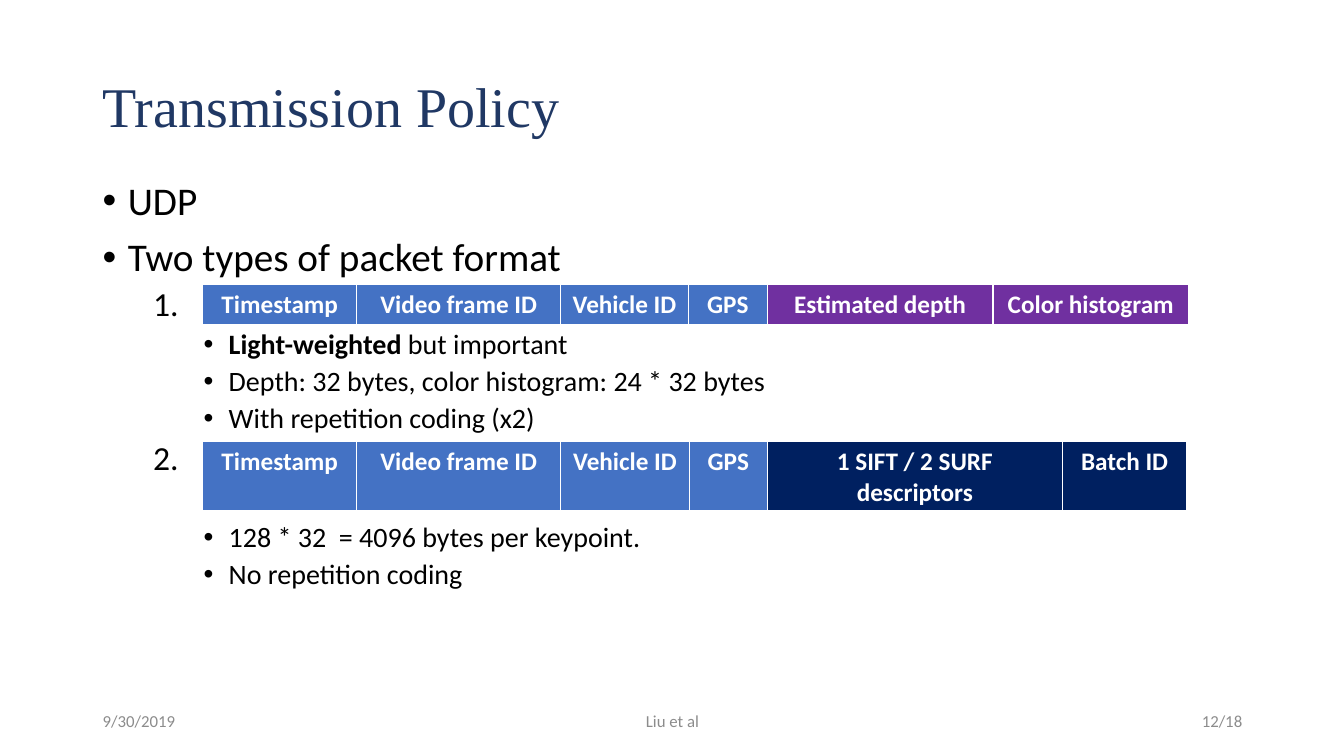
from lxml import etree
from pptx import Presentation
from pptx.dml.color import RGBColor
from pptx.enum.text import MSO_ANCHOR, PP_ALIGN
from pptx.oxml.ns import qn
from pptx.util import Inches, Pt

LEFT, CENTER, RIGHT = PP_ALIGN.LEFT, PP_ALIGN.CENTER, PP_ALIGN.RIGHT
TOP, MIDDLE = MSO_ANCHOR.TOP, MSO_ANCHOR.MIDDLE

COLORS = {"title": "203864", "text": "000000", "foot": "8C8C8C",
          "white": "FFFFFF", "head": "4472C4", "light": "7030A0",
          "heavy": "002060"}

# Content
TITLE = "Transmission Policy"
# Level, bold lead, rest of the line, space before in points
BODY = [
    ("main", "", "UDP", 0),
    ("main", "", "Two types of packet format", 10),
    ("number", "", "1.", 5),
    ("sub", "Light-weighted ", "but important", 5),
    ("sub", "", "Depth: 32 bytes, color histogram: 24 * 32 bytes", 5),
    ("sub", "", "With repetition coding (x2)", 5),
    ("number", "", "2.", 5),
    ("sub", "", "128 * 32  = 4096 bytes per keypoint.", 32),
    ("sub", "", "No repetition coding", 5),
]
# Level: size, left margin, indent, bullet
LEVELS = {"main": (28, 0.25, -0.25, "•"),
          "number": (24, 0.5, 0, ""),
          "sub": (20, 1.25, -0.25, "•")}
HEADS = ["Timestamp", "Video frame ID", "Vehicle ID", "GPS"]
# Top, payload fields, payload color, column widths
PACKETS = [
    (2.82, ["Estimated depth", "Color histogram"], "light",
     [1.53, 2.02, 1.27, 0.78, 2.24, 1.94]),
    (4.38, ["1 SIFT / 2 SURF descriptors", "Batch ID"], "heavy",
     [1.53, 2.02, 1.28, 0.77, 2.93, 1.23]),
]
FOOTER = [("9/30/2019", 0.92, 3, LEFT), ("Liu et al", 4.42, 4.5, CENTER),
          ("12/18", 9.42, 3, RIGHT)]
BORDERS = {"a:lnL": 1, "a:lnR": 1, "a:lnT": 1, "a:lnB": 3}

deck = Presentation()
deck.slide_width, deck.slide_height = Inches(13.33), Inches(7.5)
slide = deck.slides.add_slide(deck.slide_layouts[6])


def style(font, size, color, name="Calibri", bold=False):
    font.size, font.name, font.bold = Pt(size), name, bold
    font.color.rgb = RGBColor.from_string(COLORS[color])


def add_box(left, top, width, height, anchor):
    box = slide.shapes.add_textbox(*map(Inches, (left, top, width, height)))
    frame = box.text_frame
    frame.word_wrap = True
    frame.vertical_anchor = anchor
    return frame


def add_border(cell):
    props = cell._tc.get_or_add_tcPr()
    for tag, width in BORDERS.items():
        line = etree.SubElement(props, qn(tag), w=str(Pt(width)))
        fill = etree.SubElement(line, qn("a:solidFill"))
        etree.SubElement(fill, qn("a:srgbClr"), val=COLORS["white"])


# Title
frame = add_box(0.92, 0.61, 11.5, 0.96, MIDDLE)
frame.text = TITLE
frame.paragraphs[0].line_spacing = 0.9
style(frame.paragraphs[0].runs[0].font, 40, "title", "Times New Roman")

# Body list
frame = add_box(0.92, 1.75, 11.08, 5, TOP)
for i, (level, lead, rest, gap) in enumerate(BODY):
    size, margin, indent, mark = LEVELS[level]
    para = frame.add_paragraph() if i else frame.paragraphs[0]
    props = para._p.get_or_add_pPr()
    props.set("marL", str(Inches(margin)))
    props.set("indent", str(Inches(indent)))
    if mark:
        etree.SubElement(props, qn("a:buFont"), typeface="Arial")
        etree.SubElement(props, qn("a:buChar"), char=mark)
    para.line_spacing = 0.9
    para.space_before = Pt(gap)
    for part, bold in ((lead, True), (rest, False)):
        if part:
            run = para.add_run()
            run.text = part
            style(run.font, size, "text", bold=bold)

# Packet formats
for top, fields, color, widths in PACKETS:
    names = HEADS + fields
    table = slide.shapes.add_table(
        1, len(names), Inches(2.01), Inches(top),
        Inches(sum(widths)), Inches(0.41)).table
    for i, (name, width) in enumerate(zip(names, widths)):
        table.columns[i].width = Inches(width)
        cell = table.cell(0, i)
        add_border(cell)
        cell.fill.solid()
        shade = COLORS["head" if i < len(HEADS) else color]
        cell.fill.fore_color.rgb = RGBColor.from_string(shade)
        cell.text_frame.text = name
        para = cell.text_frame.paragraphs[0]
        para.alignment = CENTER
        style(para.runs[0].font, 18, "white", bold=True)

# Footer
for text, left, width, align in FOOTER:
    frame = add_box(left, 6.95, width, 0.4, MIDDLE)
    frame.text = text
    para = frame.paragraphs[0]
    para.alignment = align
    style(para.runs[0].font, 12, "foot")

deck.save("out.pptx")
